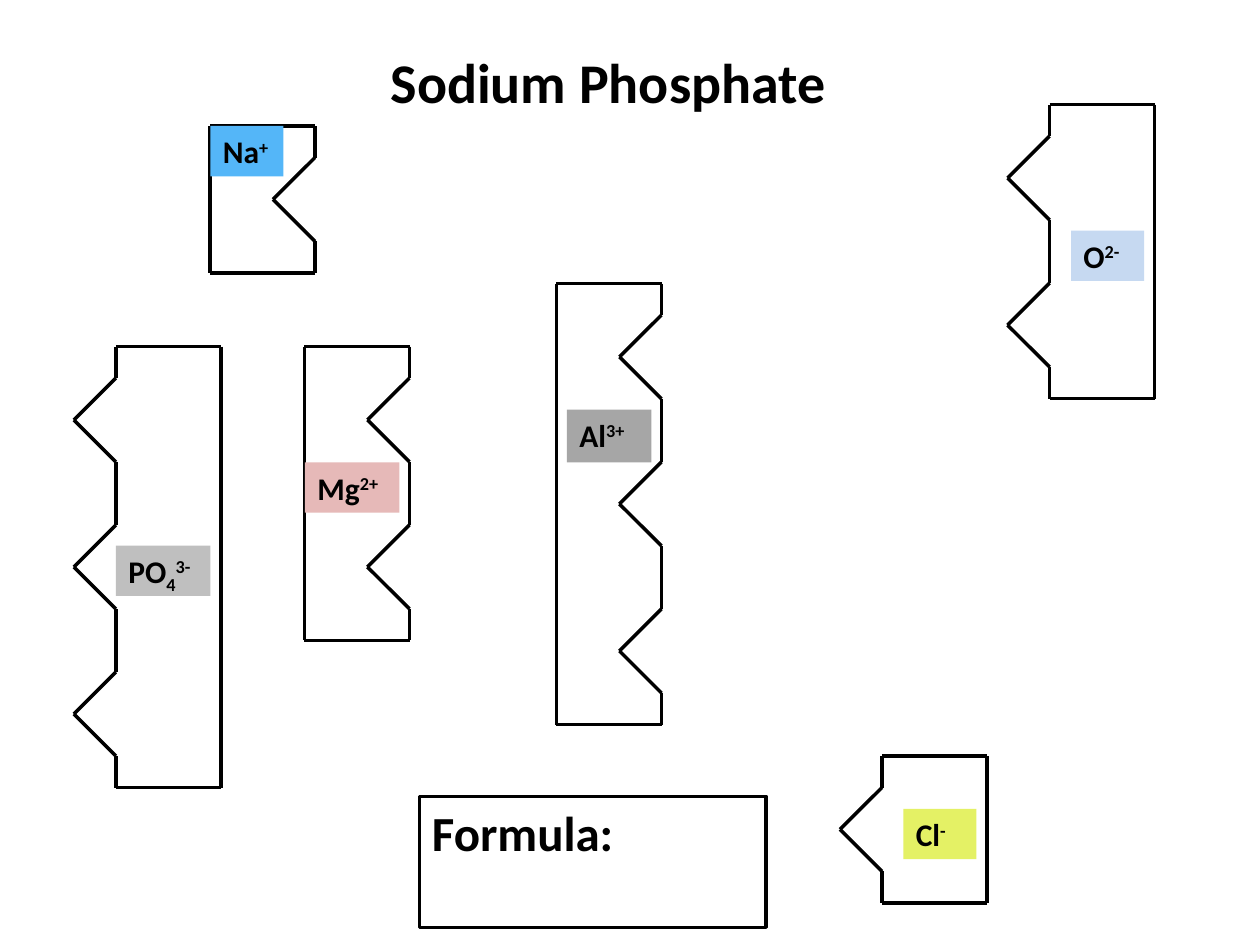
from dataclasses import dataclass
from lxml import etree
from pptx import Presentation
from pptx.dml.color import RGBColor
from pptx.enum import shapes, text
from pptx.oxml.ns import qn
from pptx.util import Inches, Pt


@dataclass(frozen=True)
class Theme:
    font: str = "Calibri"
    ink: str = "000000"
    title: int = 32
    head: int = 28
    label: int = 18
    line: int = 2


# Every ion is a stack of equal units, one tooth for each charge.
UNIT = 7 / 6
STUB = 0.25
TOOTH = 1 / 3
WIDTH = 5 / 6

SUPER, SUB = 30, -25

# toothed edge x, top, charge, side of the flat edge, label box, fill, runs
IONS = [
    (7, 6, 1, 1, (7.17, 6.42, 0.58, 0.4), "E4F165", [("Cl", 0), ("-", SUPER)]),
    (8.33, 0.83, 2, 1, (8.5, 1.83, 0.58, 0.4), "C6D9F1", [("O", 0), ("2-", SUPER)]),
    (3.25, 2.75, 2, -1, (2.42, 3.67, 0.75, 0.4), "E6B9B8", [("Mg", 0), ("2+", SUPER)]),
    (2.5, 1, 1, -1, (1.67, 1, 0.58, 0.4), "54B6F8", [("Na", 0), ("+", SUPER)]),
    (5.25, 2.25, 3, -1, (4.5, 3.25, 0.67, 0.42), "A6A6A6", [("Al", 0), ("3+", SUPER)]),
    (0.92, 2.75, 3, 1, (0.92, 4.33, 0.75, 0.4), "BFBFBF",
     [("PO", 0), ("4", SUB), ("3-", SUPER)]),
]


class Deck:
    def __init__(self, theme):
        self.theme = theme
        self.file = Presentation()
        self.file.slide_width, self.file.slide_height = Inches(10), Inches(7.5)
        self.slide = self.file.slides.add_slide(self.file.slide_layouts[5])

    def letter(self, shape, runs, size):
        """Fill a shape with bold runs, each raised or lowered by its base."""
        frame = shape.text_frame
        frame.word_wrap = True
        frame.auto_size = text.MSO_AUTO_SIZE.NONE
        frame.vertical_anchor = text.MSO_ANCHOR.TOP
        para = frame.paragraphs[0]
        para.alignment = text.PP_ALIGN.LEFT
        for words, base in runs:
            run = para.add_run()
            run.text = words
            font = run.font
            font.name, font.size, font.bold = self.theme.font, Pt(size), True
            font.color.rgb = RGBColor.from_string(self.theme.ink)
            if base:
                run._r.get_or_add_rPr().set("baseline", str(base * 1000))

    def stroke(self, line):
        line.color.rgb = RGBColor.from_string(self.theme.ink)
        line.width = Pt(self.theme.line)

    def title(self, words, box):
        shape = self.slide.shapes.title
        shape.left, shape.top, shape.width, shape.height = map(Inches, box)
        self.letter(shape, [(words, 0)], self.theme.title)

    def frame(self, words, box):
        shape = self.slide.shapes.add_shape(
            shapes.MSO_SHAPE.RECTANGLE, *map(Inches, box))
        shape.shadow.inherit = False
        shape.fill.background()
        self.stroke(shape.line)
        self.letter(shape, [(words, 0)], self.theme.head)

    def label(self, group, runs, box, fill):
        shape = group.shapes.add_textbox(*map(Inches, box))
        shape.fill.solid()
        shape.fill.fore_color.rgb = RGBColor.from_string(fill)
        self.letter(shape, runs, self.theme.label)

    def line(self, group, start, end):
        line = group.shapes.add_connector(
            shapes.MSO_CONNECTOR.STRAIGHT, *map(Inches, (*start, *end)))
        self.stroke(line.line)
        etree.SubElement(line._element.spPr, qn("a:effectLst"))

    def ion(self, edge, top, charge, side, box, fill, runs):
        """Draw a piece whose teeth point left from its toothed edge."""
        group = self.slide.shapes.add_group_shape()
        flat = edge + side * WIDTH
        end = top + charge * UNIT
        for y in (top, end):
            self.line(group, (edge, y), (flat, y))
        for step in range(charge):
            y = top + step * UNIT
            points = [
                (edge, y),
                (edge, y + STUB),
                (edge - TOOTH, y + UNIT / 2),
                (edge, y + UNIT - STUB),
                (edge, y + UNIT),
            ]
            for start, stop in zip(points, points[1:]):
                self.line(group, start, stop)
            self.line(group, (flat, y), (flat, y + UNIT))
        self.label(group, runs, box, fill)


def main():
    deck = Deck(Theme())
    deck.title("Sodium Phosphate", (3, 0.33, 3.75, 0.64))
    deck.frame("Formula:", (3.33, 6.32, 2.75, 1.04))
    for ion in IONS:
        deck.ion(*ion)
    deck.file.save("out.pptx")


if __name__ == "__main__":
    main()
